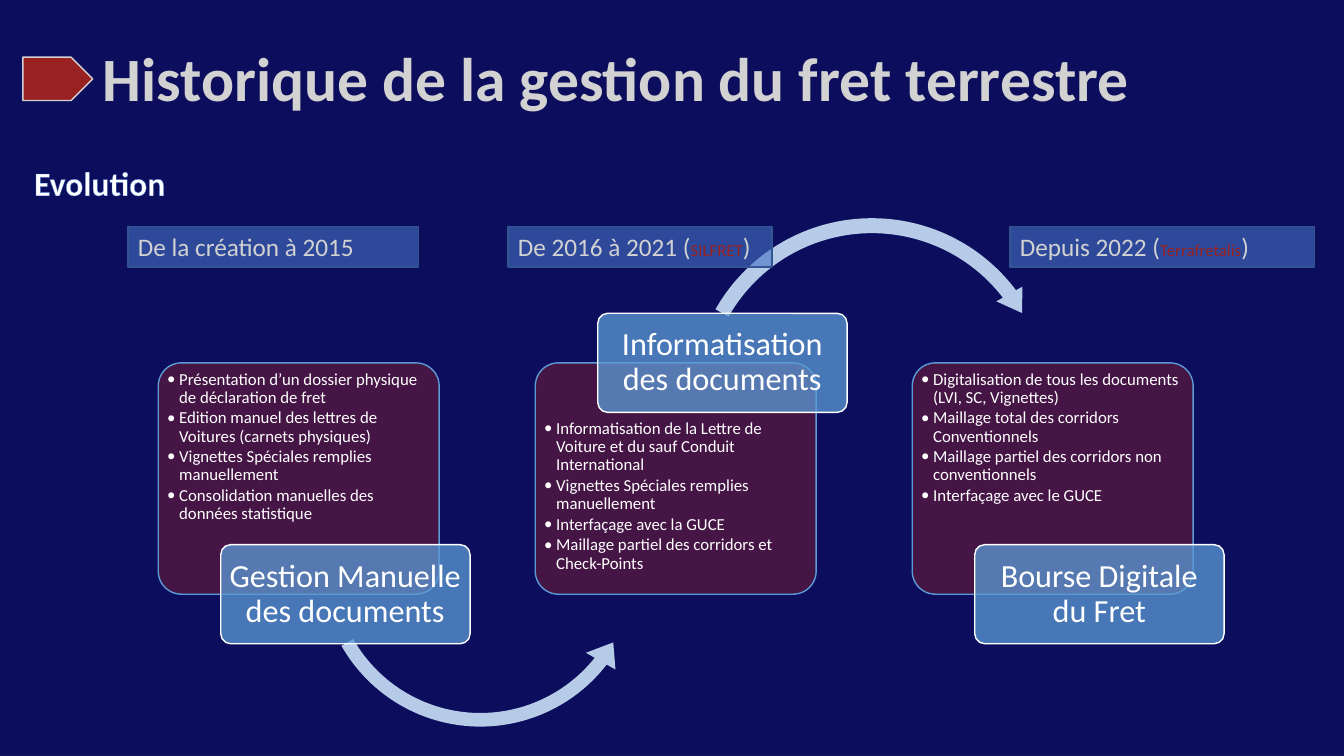
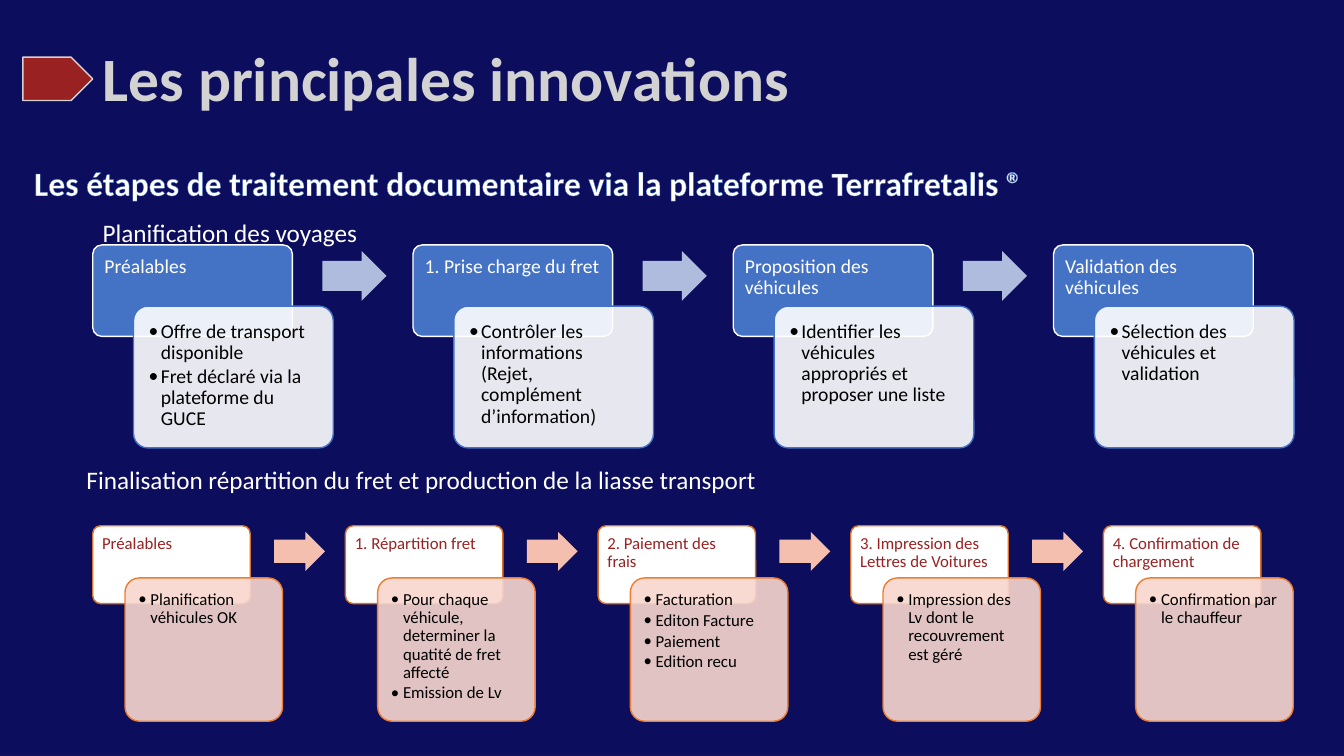
import pptx
import pptx.util
import pptx.dml.color
import pptx.enum.shapes
import pptx.enum.text
import pptx.oxml.ns
import lxml.etree

WIDE, HIGH = 13.333, 7.5
FONT = "Calibri"
HUES = {
    "base": "111160", "veil": "0C0C5D", "red": "992121", "grey": "D2D2D2",
    "white": "FFFFFF", "black": "000000", "blue": "4472C4", "navy": "325491",
    "sky": "5B9BD5", "pale": "B5CBE7", "mist": "B0BCDE", "rust": "D7712C",
    "orange": "ED7D31", "peach": "F8D7CE", "salmon": "F4BFAE",
}
KIND = pptx.enum.shapes.MSO_SHAPE
ALIGN = pptx.enum.text.PP_ALIGN
MID = pptx.enum.text.MSO_ANCHOR.MIDDLE
TOP = pptx.enum.text.MSO_ANCHOR.TOP

# Evolution cards: label, points, label row, top margin of the points
CARDS = [
    ("Gestion Manuelle des documents",
     ["Présentation d’un dossier physique de déclaration de fret",
      "Edition manuel des lettres de Voitures (carnets physiques)",
      "Vignettes Spéciales remplies manuellement",
      "Consolidation manuelles des données statistique"], 72.05, 0.01),
    ("Informatisation des documents",
     ["Informatisation de la Lettre de Voiture et du sauf Conduit International",
      "Vignettes Spéciales remplies manuellement",
      "Interfaçage avec la GUCE",
      "Maillage partiel des corridors et Check-Points"], 41.45, 0.5),
    ("Bourse Digitale du Fret",
     ["Digitalisation de tous les documents (LVI, SC, Vignettes)",
      "Maillage total des corridors Conventionnels",
      "Maillage partiel des corridors non conventionnels",
      "Interfaçage avec le GUCE"], 72.05, 0.01),
]
# Curved arrows: kind, place, adjustments
ARCS = [
    (KIND.LEFT_CIRCULAR_ARROW, (23.1, 52.53, 25.28, 44.93),
     (0.04, 5.08, 22.83, 90.24, 0.05)),
    (KIND.CIRCULAR_ARROW, (50.93, 27.87, 27.9, 49.6),
     (0.04, 4.55, 193.7, 125.76, 0.04)),
]
# Dates: left, width, period, system name
DATES = [
    (9.53, 21.6, "De la création à 2015", ""),
    (37.8, 19.65, "De 2016 à 2021 (", "SILFRET"),
    (75.15, 22.65, "Depuis 2022 (", "Terrafretalis"),
]
TRIPS = [
    ("Préalables", ["Offre de transport disponible",
                    "Fret déclaré via la plateforme du GUCE"]),
    ("1. Prise charge du fret",
     ["Contrôler les informations (Rejet, complément d’information)"]),
    ("Proposition des véhicules",
     ["Identifier les véhicules appropriés et proposer une liste"]),
    ("Validation des véhicules", ["Sélection des véhicules et validation"]),
]
LOADS = [
    ("Préalables", ["Planification véhicules OK"]),
    ("1. Répartition fret",
     ["Pour chaque véhicule, determiner la quatité de fret affecté",
      "Emission de Lv"]),
    ("2. Paiement des frais",
     ["Facturation", "Editon Facture", "Paiement", "Edition recu"]),
    ("3. Impression des Lettres de Voitures",
     ["Impression des Lv dont le recouvrement est géré"]),
    ("4. Confirmation de chargement", ["Confirmation par le chauffeur"]),
]


def rgb(name):
    return pptx.dml.color.RGBColor.from_string(HUES[name])


def place(x, y, w, h):
    """Turn shares of the slide, in percent, into lengths."""
    inch = pptx.util.Inches
    return (inch(x * WIDE / 100), inch(y * HIGH / 100),
            inch(w * WIDE / 100), inch(h * HIGH / 100))


def sub(node, tag, **keys):
    return lxml.etree.SubElement(node, pptx.oxml.ns.qn(tag), **keys)


def shape(slide, kind, spot, fill, line=None, alpha=100, adj=()):
    item = slide.shapes.add_shape(kind, *place(*spot))
    item.shadow.inherit = False
    item.fill.solid()
    item.fill.fore_color.rgb = rgb(fill)
    if alpha < 100:
        tint = item.element.spPr.find(pptx.oxml.ns.qn("a:solidFill"))[0]
        sub(tint, "a:alpha", val=str(alpha * 1000))
    if line:
        item.line.color.rgb = rgb(line)
        item.line.width = pptx.util.Pt(1)
    else:
        item.line.fill.background()
    for i, value in enumerate(adj):
        item.adjustments[i] = value
    return item


def label(slide, spot, words, **style):
    text(slide.shapes.add_textbox(*place(*spot)), [words], **style)


def text(item, paras, size=18, hue="white", bold=False, align=ALIGN.LEFT,
         anchor=TOP, pad=(0.1, 0.05), lead=1, after=0, dots=False, edge=None):
    """Fill a shape; a paragraph is a string or a list of (words, size, hue)."""
    frame = item.text_frame
    frame.word_wrap = True
    frame.vertical_anchor = anchor
    side, top = pad
    frame.margin_left = frame.margin_right = pptx.util.Inches(side)
    frame.margin_top = pptx.util.Inches(top)
    frame.margin_bottom = pptx.util.Inches(min(top, 0.05))
    for i, words in enumerate(paras):
        para = frame.add_paragraph() if i else frame.paragraphs[0]
        para.alignment = align
        para.line_spacing = lead
        para.space_after = pptx.util.Pt(round(size * after, 1))
        if dots:
            props = para._p.get_or_add_pPr()
            dent = pptx.util.Inches(0.12)
            props.set("marL", str(dent))
            props.set("indent", str(-dent))
            sub(props, "a:buFont", typeface=FONT)
            sub(props, "a:buChar", char="•")
            para.font.size = pptx.util.Pt(size)
        runs = [(words, size, hue)] if isinstance(words, str) else words
        for part, points, tint in runs:
            run = para.add_run()
            run.text = part
            run.font.name = FONT
            run.font.size = pptx.util.Pt(points)
            run.font.bold = bold
            if edge:
                rim = sub(run.font._element, "a:ln", w="10160")
                run.font._element.insert(0, rim)
                sub(sub(rim, "a:solidFill"), "a:srgbClr", val=HUES[edge])
            run.font.color.rgb = rgb(tint)


def points(item, paras, **style):
    text(item, paras, lead=0.9, after=0.15, dots=True, **style)


def base(deck, title, head):
    """Start a slide with the shared background, marker and headings."""
    slide = deck.slides.add_slide(deck.slide_layouts[6])
    slide.background.fill.solid()
    slide.background.fill.fore_color.rgb = rgb("base")
    shape(slide, KIND.RECTANGLE, (0, 0, 100, 99.7), "veil", alpha=80)
    shape(slide, KIND.PENTAGON, (1.7, 7.55, 5.2, 5.75), "red", "grey")
    label(slide, (6.9, 5.33, 93.1, 10.93), title, size=44, hue="grey",
          bold=True, anchor=MID, lead=0.9, edge="red")
    label(slide, (1.8, 20.8, 94.2, 6.67), head, size=24, bold=True,
          edge="blue")
    return slide


def cards(slide):
    for i, (name, lines, row, top) in enumerate(CARDS):
        left = 11.78 + 28.05 * i
        card = shape(slide, KIND.ROUNDED_RECTANGLE, (left, 48, 20.9, 30.6),
                     "red", "sky", 40, (0.1,))
        points(card, lines, size=12, pad=(0.02, top))
        if i < len(ARCS):
            kind, spot, adj = ARCS[i]
            shape(slide, kind, spot, "pale", adj=adj)
        plate = shape(slide, KIND.ROUNDED_RECTANGLE,
                      (left + 4.65, row, 18.55, 13.1), "sky", "white", 75,
                      (0.1,))
        text(plate, [name], size=23, align=ALIGN.CENTER, anchor=MID,
             pad=(0.04, 0.03), lead=0.9)


def dates(slide):
    for left, width, when, name in DATES:
        box = shape(slide, KIND.RECTANGLE, (left, 30, width, 5.33),
                    "blue", "navy", 60)
        runs = [(when, 18, "grey")]
        if name:
            runs += [(name, 12, "red"), (")", 18, "grey")]
        text(box, [runs])


def flow(slide, steps, y, pitch, head, body, arrow, size, pad, hues):
    """Draw a chain; head is (w, h), body (dx, dy, h), arrow (dx, w, h)."""
    fill, line, ink, back, rim, tip = hues
    wide, high = head
    for i, (name, lines) in enumerate(steps):
        x = 6.9 + pitch * i
        top = shape(slide, KIND.ROUNDED_RECTANGLE, (x, y, wide, high),
                    fill, line, adj=(0.1,))
        text(top, [name], size=size, hue=ink, pad=(pad - 0.02, pad - 0.02),
             lead=0.9)
        dx, dy, tall = body
        card = shape(slide, KIND.ROUNDED_RECTANGLE,
                     (x + dx, y + dy, wide, tall), back, rim, 90, (0.1,))
        points(card, lines, size=size, hue="black", pad=(pad, pad))
        if i < len(steps) - 1:
            dx, w, h = arrow
            shape(slide, KIND.RIGHT_ARROW, (x + dx, y + 0.8, w, h), tip,
                  adj=(0.6, 0.5))


def main():
    deck = pptx.Presentation()
    deck.slide_width = pptx.util.Inches(WIDE)
    deck.slide_height = pptx.util.Inches(HIGH)

    # History
    slide = base(deck, "Historique de la gestion du fret terrestre",
                 "Evolution")
    cards(slide)
    dates(slide)

    # Innovations
    slide = base(deck, "Les principales innovations",
                 "Les étapes de traitement documentaire via la plateforme "
                 "Terrafretalis ®")
    flow(slide, TRIPS, 32.4, 23.83, (14.86, 12.1), (3.04, 8.1, 18.75),
         (17.08, 4.78, 6.6), 14, 0.11,
         ("blue", "white", "white", "white", "blue", "mist"))
    label(slide, (6.9, 28.13, 30, 5.33), "Planification des voyages")
    label(slide, (5.7, 60.8, 55, 5.33), "Finalisation répartition du fret "
          "et production de la liasse transport")
    flow(slide, LOADS, 69.55, 18.8, (11.72, 10.3), (2.4, 6.9, 18.95),
         (13.5, 3.78, 5.15), 12, 0.09,
         ("white", "rust", "red", "peach", "orange", "salmon"))

    deck.save("out.pptx")


if __name__ == "__main__":
    main()
